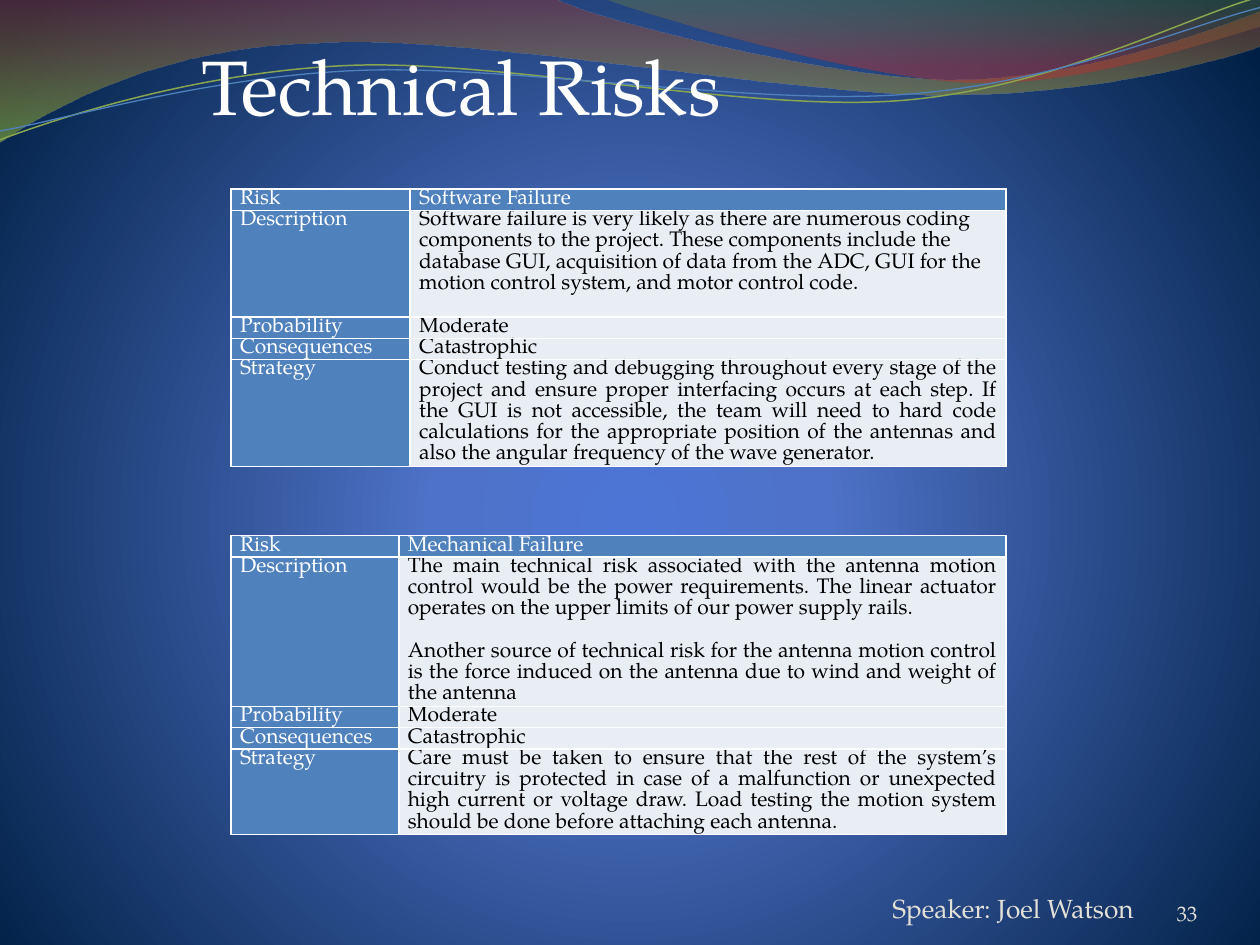
from lxml.etree import fromstring
from pptx import Presentation
from pptx.dml.color import RGBColor
from pptx.enum.text import MSO_ANCHOR, MSO_AUTO_SIZE, PP_ALIGN
from pptx.oxml.ns import nsdecls
from pptx.util import Cm, Pt

FONT = "TeX Gyre Pagella"
COLORS = {"white": "FFFFFF", "black": "000000", "label": "4F81BD", "body": "E9EDF4",
          "footer": "E3E1D7", "green": "89A54F", "blue": "4F81BD"}
LINE_HEIGHT = 0.43
TABLE_WIDTH = 15.62


def style(paragraph, size, color, align):
    paragraph.alignment = align
    for run in paragraph.runs:
        run.font.size = Pt(size)
        run.font.name = FONT
        run.font.color.rgb = RGBColor.from_string(COLORS[color])


def apply_gradient(properties, stops, direction):
    marks = "".join(
        f'<a:gs pos="{pos * 1000}"><a:srgbClr val="{color}">'
        f'<a:alpha val="{alpha * 1000}"/></a:srgbClr></a:gs>'
        for pos, color, alpha in stops)
    properties.replace(properties.find("{*}solidFill"), fromstring(
        f'<a:gradFill {nsdecls("a")} rotWithShape="1">'
        f'<a:gsLst>{marks}</a:gsLst>{direction}</a:gradFill>'))


prs = Presentation()
prs.slide_width, prs.slide_height = Cm(25.4), Cm(19.05)
slide = prs.slides.add_slide(prs.slide_layouts[5])

slide.background.fill.solid()
apply_gradient(
    slide.background._cSld.bg.bgPr,
    [(0, "4D75D6", 100), (25, "4E72C7", 100), (100, "001F44", 100)],
    '<a:path path="circle"><a:fillToRect l="10000" t="110000" r="10000" b="100000"/></a:path>')

waves = [
    ([(0, 0), (4.4, -0.01), (4.76, 0.17, 6.64, 0.63, 7.58, 0.63),
      (8.53, 0.63, 9.58, 0.26, 10, 0.09), (10.01, 0.36),
      (9.83, 0.44, 8.7, 0.76, 7.46, 0.75), (6.22, 0.75, 3.82, 0.28, 2.57, 0.34),
      (1.29, 0.36, 0.46, 0.83, -0.01, 1.13)],
     [(0, "973330", 45), (100, "95C238", 55)], None, 0),
    ([(4.79, -0.01), (5.09, 0.11, 6.82, 0.62, 7.69, 0.65),
      (8.56, 0.69, 9.61, 0.32, 10, 0.21), (10, 0)],
     [(0, "769537", 30), (80, "BE3330", 45)], None, 0),
    ([(0, 1.11), (0.48, 0.93, 1.58, 0.57, 2.77, 0.52),
      (3.95, 0.47, 5.93, 0.89, 7.13, 0.8), (8.33, 0.71, 9.38, 0.15, 9.98, -0.02)],
     None, "green", 0.85),
    ([(0, 1.04), (0.47, 0.96, 1.64, 0.61, 2.83, 0.56),
      (4.03, 0.51, 5.97, 0.84, 7.17, 0.75), (8.36, 0.67, 9.41, 0.21, 10, 0.06)],
     None, "blue", 0.75),
]
for segments, stops, line_color, line_width in waves:
    corners = [(Cm(segment[-2] * 2.54), Cm(segment[-1] * 2.54)) for segment in segments]
    builder = slide.shapes.build_freeform(*corners[0])
    builder.add_line_segments(corners[1:], close=stops is not None)
    wave = builder.convert_to_shape()
    wave.shadow.inherit = False
    for straight, segment in zip(list(wave._element.iter("{*}lnTo")), segments[1:]):
        if len(segment) == 6:
            controls = "".join(
                f'<a:pt x="{Cm(x * 2.54) - wave.left}" y="{Cm(y * 2.54) - wave.top}"/>'
                for x, y in zip(segment[::2], segment[1::2]))
            straight.getparent().replace(straight, fromstring(
                f'<a:cubicBezTo {nsdecls("a")}>{controls}</a:cubicBezTo>'))
    if stops:
        wave.fill.solid()
        apply_gradient(wave._element.spPr, stops, '<a:lin ang="5400000" scaled="0"/>')
        wave.line.fill.background()
    else:
        wave.fill.background()
        wave.line.color.rgb = RGBColor.from_string(COLORS[line_color])
        wave.line.width = Pt(line_width)

risks = [
    (3.81, 3.61, [1, 5, 1, 1, 5], [
        ("Risk", "Software Failure"),
        ("Description", "Software failure is very likely as there are numerous coding components "
         "to the project. These components include the database GUI, acquisition of data from "
         "the ADC, GUI for the motion control system, and motor control code."),
        ("Probability", "Moderate"),
        ("Consequences", "Catastrophic"),
        ("Strategy", "Conduct testing and debugging throughout every stage of the project and "
         "ensure proper interfacing occurs at each step. If the GUI is not accessible, the team "
         "will need to hard code calculations for the appropriate position of the antennas and "
         "also the angular frequency of the wave generator. "),
    ]),
    (10.8, 3.38, [1, 7, 1, 1, 4], [
        ("Risk", "Mechanical Failure"),
        ("Description", "The main technical risk associated with the antenna motion control would "
         "be the power requirements. The linear actuator operates on the upper limits of our "
         "power supply rails.\nAnother source of technical risk for the antenna motion control "
         "is the force induced on the antenna due to wind and weight of the antenna "),
        ("Probability", "Moderate"),
        ("Consequences", "Catastrophic"),
        ("Strategy", "Care must be taken to ensure that the rest of the system’s circuitry is "
         "protected in case of a malfunction or unexpected high current or voltage draw. Load "
         "testing the motion system should be done before attaching each antenna."),
    ]),
]
for top, label_width, line_counts, rows in risks:
    table = slide.shapes.add_table(len(rows), 2, Cm(4.66), Cm(top), Cm(TABLE_WIDTH),
                                   Cm(LINE_HEIGHT * sum(line_counts))).table
    table.columns[0].width = Cm(label_width)
    table.columns[1].width = Cm(TABLE_WIDTH - label_width)
    for r, (texts, lines) in enumerate(zip(rows, line_counts)):
        table.rows[r].height = Cm(LINE_HEIGHT * lines)
        for c, text in enumerate(texts):
            cell = table.cell(r, c)
            on_blue = r == 0 or c == 0
            cell.margin_left = cell.margin_right = Cm(0.18)
            cell.margin_top = cell.margin_bottom = 0
            cell.text_frame.text = text
            left_aligned = text.startswith("Software failure")
            for i, paragraph in enumerate(cell.text_frame.paragraphs):
                style(paragraph, 12, "white" if on_blue else "black",
                      PP_ALIGN.LEFT if left_aligned else PP_ALIGN.JUSTIFY)
                if i:
                    paragraph.space_before = Pt(12.2)
            cell.fill.solid()
            cell.fill.fore_color.rgb = RGBColor.from_string(COLORS["label" if on_blue else "body"])
            for i, side in enumerate("LRTB"):
                cell._tc.tcPr.insert(i, fromstring(
                    f'<a:ln{side} {nsdecls("a")} w="{Pt(1)}"><a:solidFill>'
                    f'<a:srgbClr val="{COLORS["white"]}"/></a:solidFill></a:ln{side}>'))

title = slide.shapes.title
title.left, title.top, title.width, title.height = Cm(3.81), Cm(0.64), Cm(17.35), Cm(2.13)
title.text_frame.text = "Technical Risks"
title.text_frame.auto_size = MSO_AUTO_SIZE.NONE
title.text_frame.vertical_anchor = MSO_ANCHOR.TOP
style(title.text_frame.paragraphs[0], 44, "white", PP_ALIGN.LEFT)
title._element.getparent().append(title._element)

footers = [("Speaker: Joel Watson", 15, 15.67, 17.78, 7.19, 0.84),
           ("33", 12, 22.02, 17.65, 2.12, 1.02)]
for text, size, left, top, width, height in footers:
    frame = slide.shapes.add_textbox(Cm(left), Cm(top), Cm(width), Cm(height)).text_frame
    frame.word_wrap = True
    frame.vertical_anchor = MSO_ANCHOR.BOTTOM
    frame.margin_left = frame.margin_right = frame.margin_top = frame.margin_bottom = 0
    frame.text = text
    style(frame.paragraphs[0], size, "footer", PP_ALIGN.RIGHT)

prs.save("out.pptx")
